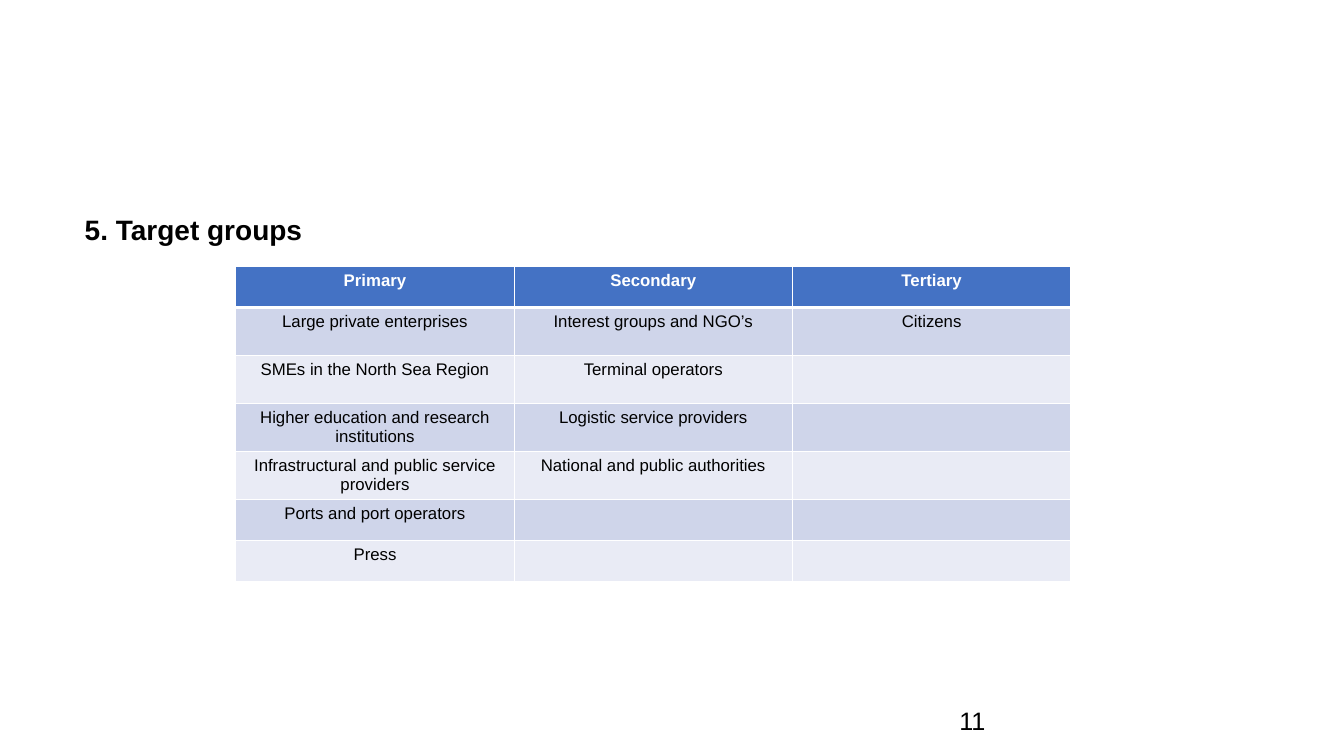
from lxml.etree import SubElement
from pptx import Presentation
from pptx.dml.color import RGBColor
from pptx.enum.text import MSO_ANCHOR, PP_ALIGN
from pptx.oxml.ns import qn
from pptx.util import Pt

FONT = "Arial"
BLACK = RGBColor(0x00, 0x00, 0x00)
WHITE = RGBColor(0xFF, 0xFF, 0xFF)
HEADER_BLUE = RGBColor(0x44, 0x72, 0xC4)
BAND_COLOURS = (RGBColor(0xCF, 0xD5, 0xEA), RGBColor(0xE9, 0xEB, 0xF5))

TARGET_GROUPS = {
    "Primary": [
        "Large private enterprises",
        "SMEs in the North Sea Region",
        "Higher education and research institutions",
        "Infrastructural and public service providers",
        "Ports and port operators",
        "Press",
    ],
    "Secondary": [
        "Interest groups and NGO’s",
        "Terminal operators",
        "Logistic service providers",
        "National and public authorities",
    ],
    "Tertiary": ["Citizens"],
}
ROW_HEIGHTS = [29.2] + [34.2] * 4 + [29.2] * 2


def format_runs(paragraph, size, colour, bold=False):
    for run in paragraph.runs:
        run.font.name = FONT
        run.font.size = Pt(size)
        run.font.bold = bold
        run.font.color.rgb = colour


def add_heading(slide, left, top, width, height):
    body = slide.placeholders[1]
    body.left, body.top, body.width, body.height = map(Pt, (left, top, width, height))
    body.text_frame.text = "5. Target groups"
    body.text_frame.vertical_anchor = MSO_ANCHOR.TOP
    paragraph = body.text_frame.paragraphs[0]
    properties = paragraph._p.get_or_add_pPr()
    properties.set("marL", "0")
    properties.set("indent", "0")
    SubElement(properties, qn("a:buNone"))
    paragraph.line_spacing = 0.9
    paragraph.space_before = Pt(0)
    format_runs(paragraph, 20, BLACK, bold=True)


def set_borders(cell, top, bottom):
    properties = cell._tc.get_or_add_tcPr()
    for side, width in (("L", 1), ("R", 1), ("T", top), ("B", bottom)):
        line = SubElement(properties, qn(f"a:ln{side}"), w=str(Pt(width)))
        fill = SubElement(line, qn("a:solidFill"))
        SubElement(fill, qn("a:srgbClr"), val=str(WHITE))


def add_groups_table(slide, left, top, width):
    frame = slide.shapes.add_table(
        len(ROW_HEIGHTS), len(TARGET_GROUPS),
        Pt(left), Pt(top), Pt(width), Pt(sum(ROW_HEIGHTS)))
    table = frame.table
    for row, height in zip(table.rows, ROW_HEIGHTS):
        row.height = Pt(height)

    for column_index, (heading, members) in enumerate(TARGET_GROUPS.items()):
        table.columns[column_index].width = Pt(width / len(TARGET_GROUPS))
        texts = [heading] + members
        for row_index in range(len(ROW_HEIGHTS)):
            cell = table.cell(row_index, column_index)
            is_header = row_index == 0
            # A thick rule parts the header from the banded rows
            set_borders(cell, top=3 if row_index == 1 else 1,
                        bottom=3 if is_header else 1)
            cell.fill.solid()
            cell.fill.fore_color.rgb = (
                HEADER_BLUE if is_header else BAND_COLOURS[(row_index - 1) % 2])
            cell.margin_bottom = Pt(2)
            if row_index < len(texts):
                cell.text_frame.text = texts[row_index]
                paragraph = cell.text_frame.paragraphs[0]
                paragraph.alignment = PP_ALIGN.CENTER
                format_runs(paragraph, 12, WHITE if is_header else BLACK, is_header)


def add_page_number(slide, left, top, width, height):
    box = slide.shapes.add_textbox(Pt(left), Pt(top), Pt(width), Pt(height))
    box.text_frame.word_wrap = True
    box.text_frame.vertical_anchor = MSO_ANCHOR.MIDDLE
    box.text_frame.text = "11"
    format_runs(box.text_frame.paragraphs[0], 18, BLACK)


def build_target_groups_slide(presentation):
    slide = presentation.slides.add_slide(presentation.slide_layouts[1])
    # The heading sits in the body, so the title is not needed
    title = slide.shapes.title._element
    title.getparent().remove(title)

    add_page_number(slide, 678.2, 500.4, 216, 28.8)
    add_heading(slide, 53.3, 151.2, 738.7, 175)
    add_groups_table(slide, 168.5, 190.4, 596.4)


def main():
    presentation = Presentation()
    presentation.slide_width = Pt(960)
    presentation.slide_height = Pt(540)
    build_target_groups_slide(presentation)
    presentation.save("out.pptx")


if __name__ == "__main__":
    main()
